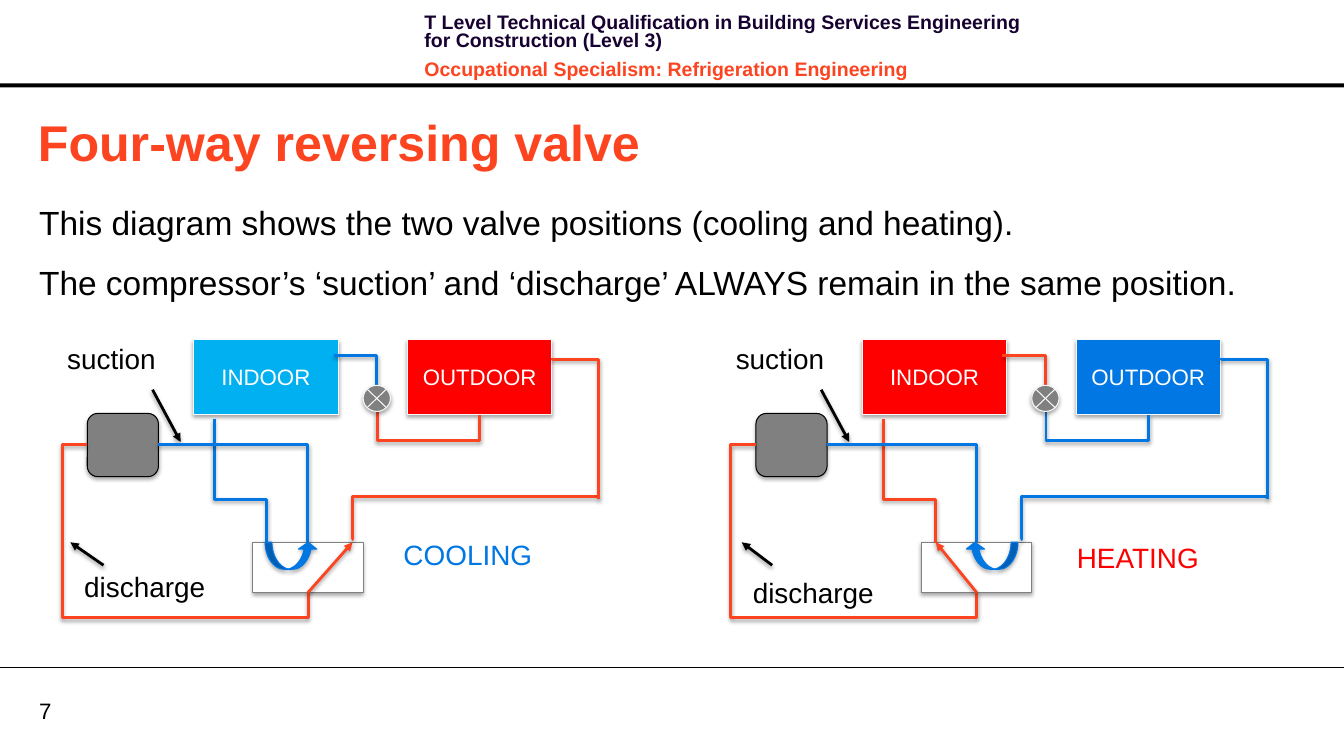
from dataclasses import dataclass

from lxml.etree import SubElement
from pptx import Presentation
from pptx.dml.color import RGBColor
from pptx.enum.shapes import MSO_CONNECTOR, MSO_SHAPE
from pptx.enum.text import MSO_ANCHOR, PP_ALIGN
from pptx.oxml.ns import qn
from pptx.shapes.autoshape import Shape
from pptx.shapes.connector import Connector
from pptx.util import Cm, Pt

RECTANGLE = MSO_SHAPE.RECTANGLE
COMPRESSOR = MSO_SHAPE.FLOWCHART_ALTERNATE_PROCESS
JUNCTION = MSO_SHAPE.FLOWCHART_SUMMING_JUNCTION
CURVED_ARROW = MSO_SHAPE.CURVED_UP_ARROW
STRAIGHT, ELBOW = MSO_CONNECTOR.STRAIGHT, MSO_CONNECTOR.ELBOW
TOP, MIDDLE = MSO_ANCHOR.TOP, MSO_ANCHOR.MIDDLE
LEFT, CENTER = PP_ALIGN.LEFT, PP_ALIGN.CENTER
BOTTOM_SITE = 2

BLACK = RGBColor(0x00, 0x00, 0x00)
WHITE = RGBColor(0xFF, 0xFF, 0xFF)
PALE = RGBColor(0xF9, 0xF9, 0xF9)
GREY = RGBColor(0x80, 0x80, 0x80)
NAVY = RGBColor(0x17, 0x01, 0x30)
ORANGE = RGBColor(0xFC, 0x44, 0x21)
RED = RGBColor(0xFF, 0x00, 0x00)
BLUE = RGBColor(0x00, 0x77, 0xE3)
SKY = RGBColor(0x00, 0xB0, 0xF0)

SLIDE_WIDTH, SLIDE_HEIGHT = 34.01, 19
FONT = "Arial"

Box = tuple[float, float, float, float]
Point = tuple[float, float]


@dataclass
class Pipe:
    box: Box
    bends: int
    color: RGBColor
    rotation: int = 0
    flip: str = ""
    adjustments: tuple[float, ...] = ()


@dataclass
class Circuit:
    offset: float
    indoor_fill: RGBColor
    outdoor_fill: RGBColor
    indoor_pipe: RGBColor
    outdoor_pipe: RGBColor
    discharge_top: float
    discharge_tip: float
    valve_tip: float
    slider_left: float
    slider_flipped: bool
    mode: str
    mode_box: Box
    mode_color: RGBColor


CIRCUITS = [
    Circuit(0, SKY, RED, BLUE, ORANGE, 14.27, 1.78, 8.92, 6.71, False,
            "COOLING", (9.96, 13.46, 3.78, 1.12), BLUE),
    Circuit(16.92, RED, BLUE, ORANGE, BLUE, 14.43, 1.85, 6.76, 7.52, True,
            "HEATING", (10.08, 13.56, 3.63, 1.12), RED),
]


def write(shape: Shape, *lines: str, size: int, colors: tuple[RGBColor, ...] = (BLACK,),
          bold: bool = False, align: PP_ALIGN = LEFT, anchor: MSO_ANCHOR = TOP,
          wrap: bool = True, insets: Point = (0.25, 0.13), spacing: float | Pt = 1.0,
          before: int = 0, after: int = 0) -> None:
    frame = shape.text_frame
    frame.word_wrap, frame.vertical_anchor = wrap, anchor
    frame.margin_left = frame.margin_right = Cm(insets[0])
    frame.margin_top = frame.margin_bottom = Cm(insets[1])
    for index, line in enumerate(lines):
        paragraph = frame.add_paragraph() if index else frame.paragraphs[0]
        paragraph.text, paragraph.alignment = line, align
        paragraph.line_spacing, paragraph.space_after = spacing, Pt(after)
        paragraph.space_before = Pt(before if index else 0)
        font = paragraph.font
        font.name, font.size, font.bold = FONT, Pt(size), bold
        font.color.rgb = colors[index % len(colors)]


def add_box(shapes, box: Box) -> Shape:
    return shapes.add_textbox(*(Cm(length) for length in box))


def add_shadow(effects, opacity: int, distance: float) -> None:
    shadow = SubElement(effects, qn("a:outerShdw"), blurRad=str(Pt(3.1)),
                        dist=str(Pt(distance)), dir="5400000", rotWithShape="0")
    color = SubElement(shadow, qn("a:srgbClr"), val="000000")
    SubElement(color, qn("a:alpha"), val=str(opacity * 1000))


def add_part(shapes, preset: MSO_SHAPE, box: Box, fill: RGBColor,
             line: RGBColor | None = None) -> Shape:
    shape = shapes.add_shape(preset, *(Cm(length) for length in box))
    shape.fill.solid()
    shape.fill.fore_color.rgb = fill
    shape.shadow.inherit = False
    if line is None:
        shape.line.fill.background()
    else:
        shape.line.color.rgb, shape.line.width = line, Pt(0.75)
        add_shadow(shape._element.spPr.find(qn("a:effectLst")), 35, 1.8)
    return shape


def add_line(shapes, start: Point, end: Point, color: RGBColor, width: float = 2,
             kind: MSO_CONNECTOR = STRAIGHT, arrow: bool = False,
             shadow: bool = True) -> Connector:
    connector = shapes.add_connector(kind, *(Cm(length) for length in start + end))
    connector.line.color.rgb, connector.line.width = color, Pt(width)
    properties = connector._element.spPr
    if arrow:
        SubElement(properties.find(qn("a:ln")), qn("a:tailEnd"), type="triangle")
    effects = SubElement(properties, qn("a:effectLst"))
    if shadow:
        add_shadow(effects, 38, 1.6)
    return connector


def add_pipe(shapes, pipe: Pipe, offset: float) -> None:
    left, top, width, height = pipe.box
    xs, ys = (left + offset, left + offset + width), (top, top + height)
    across, down = "h" in pipe.flip, "v" in pipe.flip
    connector = add_line(shapes, (xs[across], ys[down]), (xs[not across], ys[not down]),
                         pipe.color, kind=ELBOW)
    properties = connector._element.spPr
    properties.xfrm.set("rot", str(pipe.rotation * 60000))
    geometry = properties.find(qn("a:prstGeom"))
    geometry.set("prst", f"bentConnector{pipe.bends + 1}")
    geometry.rewrite_guides([(f"adj{number}", round(value * 100000))
                             for number, value in enumerate(pipe.adjustments, 1)])


def add_circuit(shapes, circuit: Circuit) -> None:
    offset, indoor, outdoor = circuit.offset, circuit.indoor_pipe, circuit.outdoor_pipe

    def shifted(left: float, *rest: float) -> tuple[float, ...]:
        return (left + offset, *rest)

    # Suction and discharge labels with their pointers
    for name, box in (("suction", (1.45, 8.51, 2.77, 1.12)),
                      ("discharge", (1.88, circuit.discharge_top, 3.61, 1.12))):
        write(add_box(shapes, shifted(*box)), name, size=20, wrap=False)
    for start, end in (((2.62, 14.3), (circuit.discharge_tip, 13.72)),
                       ((3.86, 9.86), (4.57, 11.18))):
        add_line(shapes, shifted(*start), shifted(*end), BLACK, arrow=True)

    # Units, valve body and compressor
    for name, left, fill in (("INDOOR", 4.9, circuit.indoor_fill),
                             ("OUTDOOR", 10.31, circuit.outdoor_fill)):
        unit = add_part(shapes, RECTANGLE, shifted(left, 8.59, 3.66, 1.9), fill, PALE)
        write(unit, name, size=16, colors=(WHITE,), align=CENTER, anchor=MIDDLE)
    valve = add_part(shapes, RECTANGLE, shifted(6.4, 13.72, 2.79, 1.27), WHITE, GREY)
    add_part(shapes, COMPRESSOR, shifted(2.21, 10.46, 1.8, 1.6), GREY, BLACK)

    # Pipework: compressor, valve, units, expansion device
    for pipe in (
        Pipe((2.21, 11.25, 5.59, 3.73), 3, ORANGE, 180, "hv", (-0.114, 1.171)),
        Pipe((8.92, 12.57, 6.22, 1.07), 2, outdoor, 180, "v", (0.999,)),
        Pipe((4.53, 11.51, 3.12, 1.32), 2, indoor, 270, "h", (0.648,)),
        Pipe((4.01, 11.25, 3.78, 2.46), 1, BLUE),
        Pipe((12.78, 10.26, 3.58, 1.17), 2, outdoor, 270, "h", (0.012,)),
        Pipe((10.8, 9.17, 0.09, 2.59), 2, outdoor, 90, "h", (-7.06,)),
        Pipe((8.61, 8.84, 0.76, 1.09), 1, indoor, 270, "v"),
    ):
        add_pipe(shapes, pipe, offset)
    add_part(shapes, JUNCTION, shifted(9.19, 9.75, 0.69, 0.66), GREY, PALE)

    # Flow paths inside the valve
    slider = add_part(shapes, CURVED_ARROW, shifted(circuit.slider_left, 13.72, 1.32, 0.69),
                      BLUE, BLUE)
    slider.adjustments[1] = 0.666
    if circuit.slider_flipped:
        slider._element.spPr.xfrm.set("flipH", "1")
    flow = add_line(shapes, shifted(7.8, 14.99), shifted(circuit.valve_tip, 13.72),
                    ORANGE, arrow=True)
    flow.begin_connect(valve, BOTTOM_SITE)

    # Mode label
    mode = add_part(shapes, RECTANGLE, shifted(*circuit.mode_box), WHITE)
    write(mode, circuit.mode, size=20, colors=(circuit.mode_color,), wrap=False)


def main() -> None:
    presentation = Presentation()
    presentation.slide_width, presentation.slide_height = Cm(SLIDE_WIDTH), Cm(SLIDE_HEIGHT)
    blank_layout = presentation.slide_layouts[6]
    shapes = presentation.slides.add_slide(blank_layout).shapes

    # Header and footer
    add_part(shapes, RECTANGLE, (0, 2.11, SLIDE_WIDTH, 0.1), BLACK)
    write(add_box(shapes, (10.49, 0.25, 16, 1.63)),
          "T Level Technical Qualification in Building Services Engineering "
          "for Construction (Level 3)",
          "Occupational Specialism: Refrigeration Engineering",
          size=14, colors=(NAVY, ORANGE), bold=True, spacing=Pt(13.1), before=4, after=4)
    write(add_box(shapes, (0.99, 17.63, 1.63, 0.69)), "7", size=16, anchor=MIDDLE,
          insets=(0, 0))
    add_line(shapes, (0, 16.89), (SLIDE_WIDTH, 16.89), BLACK, 0.75, shadow=False)

    # Title and body
    write(add_box(shapes, (0.71, 2.67, 32.31, 1.8)), "Four-way reversing valve",
          size=36, colors=(ORANGE,), bold=True, anchor=MIDDLE)
    write(add_box(shapes, (0.99, 5, 31.06, 3.2)),
          "This diagram shows the two valve positions (cooling and heating).",
          "The compressor’s ‘suction’ and ‘discharge’ ALWAYS remain in the same position.",
          size=24, insets=(0, 0), spacing=1.1, after=12)

    # Cooling and heating circuits
    for circuit in CIRCUITS:
        add_circuit(shapes.add_group_shape().shapes, circuit)

    presentation.save("out.pptx")


if __name__ == "__main__":
    main()
